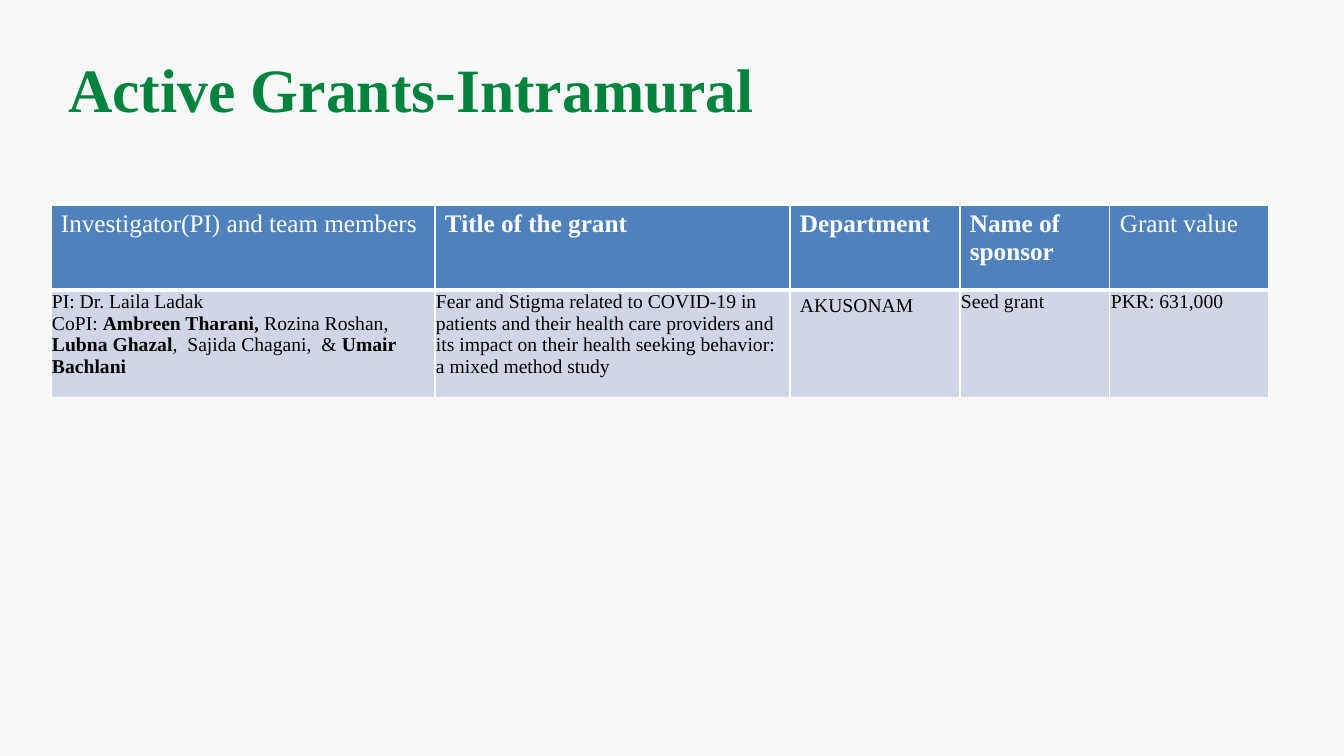
import pptx
import pptx.util
import pptx.dml.color
import pptx.enum.text
import pptx.oxml
import pptx.oxml.ns

PX = 914400 / 100.8
FONT = "Times New Roman"
GREEN = pptx.dml.color.RGBColor(0x00, 0x84, 0x3D)
BLUE = pptx.dml.color.RGBColor(0x4F, 0x81, 0xBD)
PALE_BLUE = pptx.dml.color.RGBColor(0xCF, 0xD7, 0xE7)
WHITE = pptx.dml.color.RGBColor(0xFF, 0xFF, 0xFF)
BLACK = pptx.dml.color.RGBColor(0x00, 0x00, 0x00)
BACKGROUND = pptx.dml.color.RGBColor(0xF8, 0xF8, 0xF8)


def px(length):
    return pptx.util.Emu(round(length * PX))


def add_run(paragraph, text, size, color, bold):
    run = paragraph.add_run()
    run.text = text
    run.font.color.rgb = color
    style = {"name": FONT, "size": pptx.util.Pt(size), "bold": bold}
    for name, value in style.items():
        setattr(run.font, name, value)


presentation = pptx.Presentation()
presentation.slide_width = px(1344)
presentation.slide_height = px(756)
slide = presentation.slides.add_slide(presentation.slide_layouts[5])
slide.background.fill.solid()
slide.background.fill.fore_color.rgb = BACKGROUND

title = slide.shapes.title
title_place = {"left": 58, "top": 25, "width": 1210, "height": 126}
for name, value in title_place.items():
    setattr(title, name, px(value))
title.text_frame.vertical_anchor = pptx.enum.text.MSO_ANCHOR.MIDDLE
title_paragraph = title.text_frame.paragraphs[0]
title_paragraph.alignment = pptx.enum.text.PP_ALIGN.LEFT
add_run(title_paragraph, "Active Grants-Intramural", 44, GREEN, True)

column_widths = [384, 355, 170, 150, 159]
row_heights = [85, 108]
headers = [
    ("Investigator(PI) and team members", False),
    ("Title of the grant", True),
    ("Department", True),
    ("Name of sponsor", True),
    ("Grant value", False),
]
team = [
    [("PI: Dr. Laila Ladak", False)],
    [
        ("CoPI: ", False),
        ("Ambreen Tharani, ", True),
        ("Rozina Roshan, ", False),
        ("Lubna Ghazal", True),
        (",  Sajida Chagani,  & ", False),
        ("Umair Bachlani", True),
    ],
]
grant_details = [
    "Fear and Stigma related to COVID-19 in patients and their health care "
    "providers and its impact on their health seeking behavior: a mixed method study",
    "AKUSONAM",
    "Seed grant",
    "PKR: 631,000",
]
rows = [
    [[[header]] for header in headers],
    [team] + [[[(detail, False)]] for detail in grant_details],
]
row_styles = [
    {"fill": BLUE, "size": 18, "color": WHITE, "borders": {"L": 1, "R": 1, "T": 1, "B": 3}},
    {"fill": PALE_BLUE, "size": 14, "color": BLACK, "borders": {"L": 1, "R": 1, "T": 3, "B": 1}},
]

table = slide.shapes.add_table(
    len(rows), len(column_widths), px(51), px(205), px(sum(column_widths)), px(sum(row_heights))
).table
for column, width in zip(table.columns, column_widths):
    column.width = px(width)
for table_row, height in zip(table.rows, row_heights):
    table_row.height = px(height)

for row_index, (row, style) in enumerate(zip(rows, row_styles)):
    for column_index, paragraphs in enumerate(row):
        cell = table.cell(row_index, column_index)
        cell.fill.solid()
        cell.fill.fore_color.rgb = style["fill"]
        roomy = row_index == 0 or grant_details[column_index - 1] == "AKUSONAM"
        margins = (10, 5, 10, 5) if roomy else (1, 1, 1, 0)
        for side, margin in zip(("left", "top", "right", "bottom"), margins):
            setattr(cell, f"margin_{side}", px(margin))
        for index, runs in enumerate(paragraphs):
            frame = cell.text_frame
            paragraph = frame.paragraphs[0] if index == 0 else frame.add_paragraph()
            for text, bold in runs:
                add_run(paragraph, text, style["size"], style["color"], bold)
        properties = cell._tc.get_or_add_tcPr()
        for position, (side, points) in enumerate(style["borders"].items()):
            border = pptx.oxml.parse_xml(
                f'<a:ln{side} {pptx.oxml.ns.nsdecls("a")} w="{pptx.util.Pt(points)}">'
                f'<a:solidFill><a:srgbClr val="{WHITE}"/></a:solidFill></a:ln{side}>'
            )
            properties.insert(position, border)

presentation.save("out.pptx")
